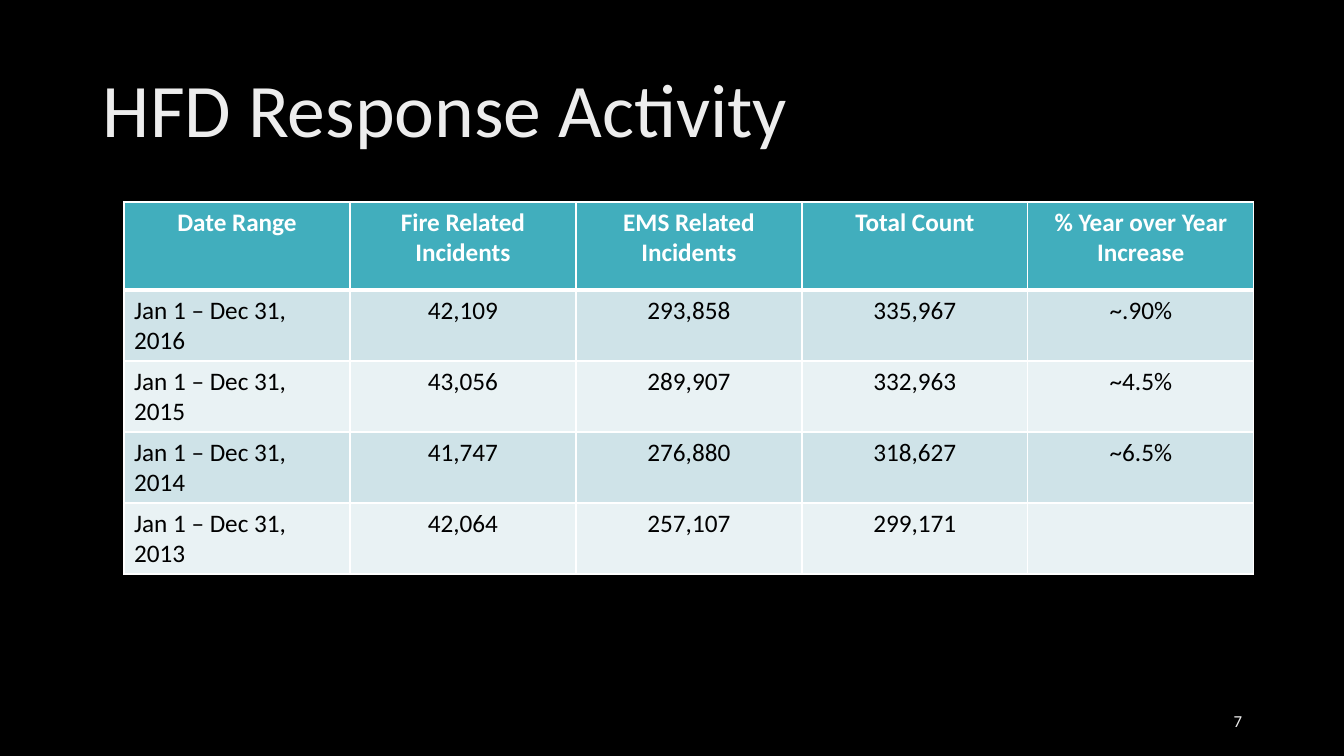
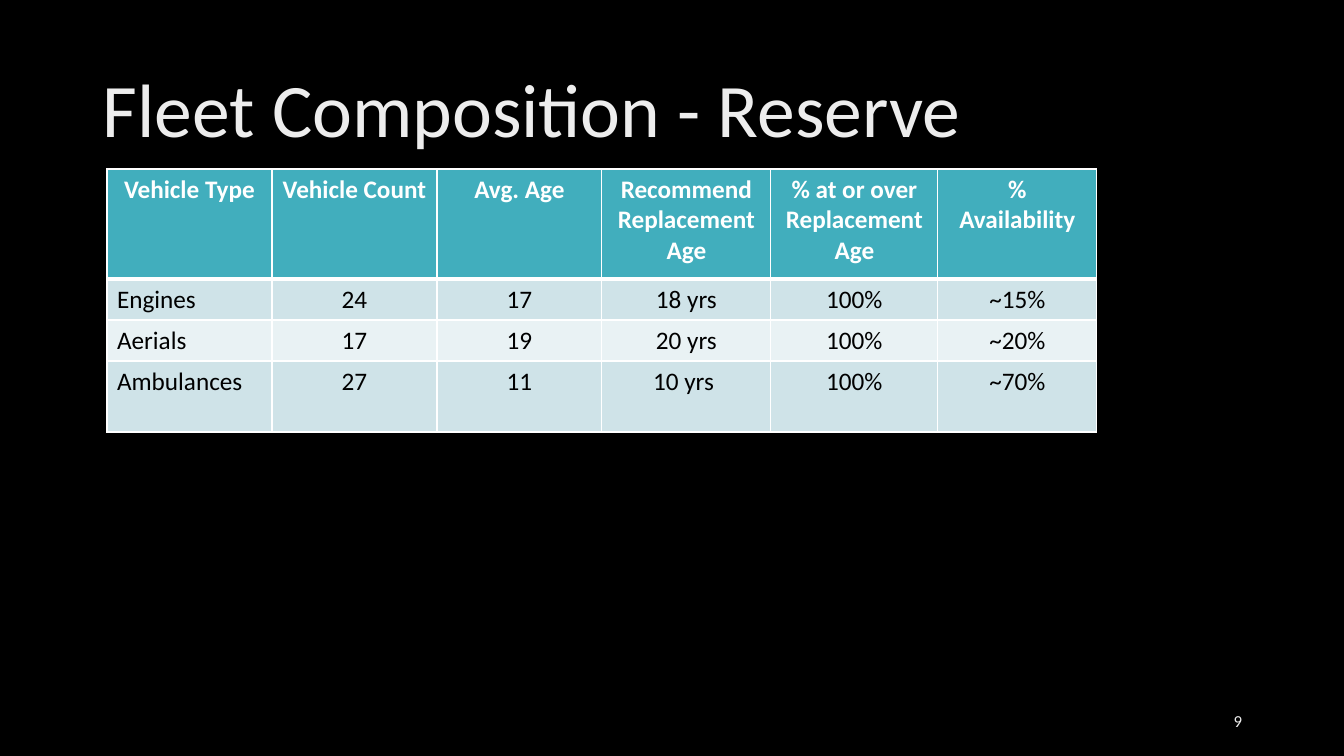
from dataclasses import dataclass

from pptx import Presentation
from pptx.dml.color import RGBColor
from pptx.enum.text import MSO_ANCHOR as Anchor, PP_ALIGN as Align
from pptx.oxml.ns import qn
from pptx.util import Emu, Pt
from lxml.etree import SubElement

# Content
RESPONSE = {
    "title": "HFD Response Activity",
    "number": 7,
    "at": (124, 202),
    "columns": [226] * 5,
    "heights": [88] + [71] * 4,
    "rows": [
        ("Date Range", "Fire Related Incidents", "EMS Related Incidents",
         "Total Count", "% Year over Year Increase"),
        ("Jan 1 – Dec 31, 2016", "42,109", "293,858", "335,967", "~.90%"),
        ("Jan 1 – Dec 31, 2015", "43,056", "289,907", "332,963", "~4.5%"),
        ("Jan 1 – Dec 31, 2014", "41,747", "276,880", "318,627", "~6.5%"),
        ("Jan 1 – Dec 31, 2013", "42,064", "257,107", "299,171", ""),
    ],
}
RESERVE = {
    "title": "Fleet Composition - Reserve",
    "number": 9,
    "at": (107, 169),
    "columns": [165, 165, 165, 169, 167, 159],
    "heights": [110, 41, 41, 71],
    "rows": [
        ("Vehicle Type", "Vehicle Count", "Avg. Age", "Recommend Replacement Age",
         "% at or over Replacement Age", "% Availability"),
        ("Engines", "24", "17", "18 yrs", "100%", "~15%"),
        ("Aerials", "17", "19", "20 yrs", "100%", "~20%"),
        ("Ambulances", "27", "11", "10 yrs ", "100%", "~70%"),
    ],
}


@dataclass(frozen=True)
class Theme:
    font: str = "Calibri"
    background: str = "000000"
    heading: str = "EDEDED"
    header_fill: str = "41AEBD"
    header_text: str = "FFFFFF"
    body_text: str = "000000"
    bands: tuple = ("CFE3E8", "E9F2F4")
    rule: str = "FFFFFF"
    thin: int = 1
    thick: int = 3
    title_size: int = 54
    table_size: int = 18
    number_size: int = 12


THEME = Theme()
WIDTH, HEIGHT = 1344, 756
TITLE_BOX = (93, 40, 1159, 146)
NUMBER_BOX = (950, 701, 302, 40)


def px(length):
    return Emu(round(length * 12192000 / WIDTH))


def write(frame, text, size, color, bold=False, align=Align.LEFT, spacing=None):
    paragraph = frame.paragraphs[0]
    paragraph.alignment = align
    paragraph.line_spacing = spacing
    font = paragraph.font
    if text:
        run = paragraph.add_run()
        run.text = text
        font = run.font
    font.name, font.size, font.bold = THEME.font, Pt(size), bold
    font.color.rgb = RGBColor.from_string(color)


def add_label(slide, box, text, size, **style):
    frame = slide.shapes.add_textbox(*map(px, box)).text_frame
    frame.word_wrap = True
    frame.vertical_anchor = Anchor.MIDDLE
    write(frame, text, size, THEME.heading, **style)


def add_borders(cell, top, bottom):
    properties = cell._tc.get_or_add_tcPr()
    widths = {"a:lnL": THEME.thin, "a:lnR": THEME.thin, "a:lnT": top, "a:lnB": bottom}
    for side, width in widths.items():
        line = SubElement(properties, qn(side), w=str(Pt(width)))
        fill = SubElement(line, qn("a:solidFill"))
        SubElement(fill, qn("a:srgbClr"), val=THEME.rule)


def add_data_table(slide, content):
    rows, columns, heights = content["rows"], content["columns"], content["heights"]
    box = (*content["at"], sum(columns), sum(heights))
    table = slide.shapes.add_table(len(rows), len(columns), *map(px, box)).table
    for column, width in zip(table.columns, columns):
        column.width = px(width)
    for r, values in enumerate(rows):
        table.rows[r].height = px(heights[r])
        header = r == 0
        band = THEME.header_fill if header else THEME.bands[(r - 1) % 2]
        for c, value in enumerate(values):
            cell = table.cell(r, c)
            # The thick rule lies between the header and the first body row
            add_borders(cell, top=THEME.thick if r == 1 else THEME.thin,
                        bottom=THEME.thick if header else THEME.thin)
            cell.fill.solid()
            cell.fill.fore_color.rgb = RGBColor.from_string(band)
            write(cell.text_frame, value, THEME.table_size,
                  THEME.header_text if header else THEME.body_text, bold=header,
                  align=Align.CENTER if header or c else Align.LEFT)


def add_content_slide(deck, content):
    slide = deck.slides.add_slide(deck.slide_layouts[6])
    add_label(slide, TITLE_BOX, content["title"], THEME.title_size, spacing=0.9)
    add_data_table(slide, content)
    add_label(slide, NUMBER_BOX, str(content["number"]), THEME.number_size,
              align=Align.RIGHT)


def main():
    deck = Presentation()
    deck.slide_width, deck.slide_height = px(WIDTH), px(HEIGHT)
    # Shared background
    backdrop = deck.slide_master.background.fill
    backdrop.solid()
    backdrop.fore_color.rgb = RGBColor.from_string(THEME.background)
    for content in (RESPONSE, RESERVE):
        add_content_slide(deck, content)
    deck.save("out.pptx")


if __name__ == "__main__":
    main()
